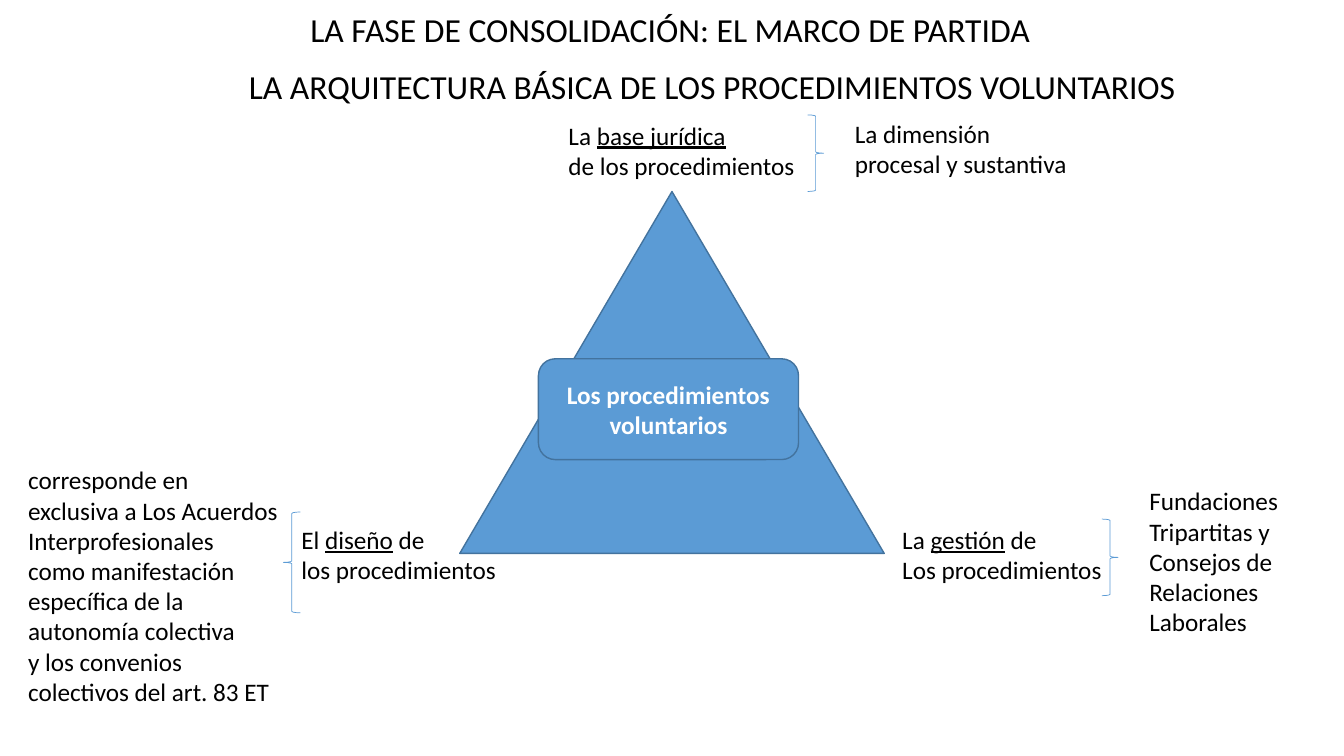
from pptx import Presentation
from pptx.dml.color import RGBColor
from pptx.enum.shapes import MSO_SHAPE as SHAPE
from pptx.enum.text import MSO_ANCHOR as ANCHOR, MSO_AUTO_SIZE as AUTO, PP_ALIGN as ALIGN
from pptx.util import Inches, Pt

COLORS = {"text": "000000", "fill": "5B9BD5", "edge": "43739E", "light": "FFFFFF"}
FONT = "Calibri"


class Deck:
    def __init__(self, width, height):
        self.prs = Presentation()
        self.prs.slide_width, self.prs.slide_height = Inches(width), Inches(height)
        self.s = self.prs.slides.add_slide(self.prs.slide_layouts[6])

    def color(self, name):
        return RGBColor.from_string(COLORS[name])

    def run(self, p, text, size=18, color="text", bold=False, underline=False):
        r = p.add_run()
        r.text = text
        r.font.name, r.font.size = FONT, Pt(size)
        r.font.bold, r.font.underline = bold, underline
        r.font.color.rgb = self.color(color)

    def text(self, box, lines, size=18):
        tf = self.s.shapes.add_textbox(*map(Inches, box)).text_frame
        tf.word_wrap = False
        tf.auto_size = AUTO.SHAPE_TO_FIT_TEXT
        for i, line in enumerate(lines):
            p = tf.add_paragraph() if i else tf.paragraphs[0]
            for j, part in enumerate(line.split("_")):
                if part:
                    self.run(p, part, size, underline=j % 2 == 1)

    def shape(self, kind, box, line="edge", weight=1, fill="fill"):
        sp = self.s.shapes.add_shape(kind, *map(Inches, box))
        sp.shadow.inherit = False
        if fill:
            sp.fill.solid()
            sp.fill.fore_color.rgb = self.color(fill)
        else:
            sp.fill.background()
        sp.line.color.rgb = self.color(line)
        sp.line.width = Pt(weight)
        return sp

    def brace(self, kind, box):
        self.shape(kind, box, line="fill", weight=0.5, fill=None)

    def label(self, sp, text):
        tf = sp.text_frame
        tf.word_wrap = True
        tf.vertical_anchor = ANCHOR.MIDDLE
        p = tf.paragraphs[0]
        p.alignment = ALIGN.CENTER
        self.run(p, text, color="light", bold=True)


def main():
    deck = Deck(13.33, 7.5)

    deck.text((2.98, 0.04, 7.4, 0.5),
              ["LA FASE DE CONSOLIDACIÓN: EL MARCO DE PARTIDA"], 24)
    deck.text((2.37, 0.6, 9.47, 0.5),
              ["LA ARQUITECTURA BÁSICA DE LOS PROCEDIMIENTOS VOLUNTARIOS"], 24)

    deck.shape(SHAPE.ISOSCELES_TRIANGLE, (4.56, 1.9, 4.21, 3.59))
    center = deck.shape(SHAPE.ROUNDED_RECTANGLE, (5.34, 3.56, 2.58, 1))
    deck.label(center, "Los procedimientos voluntarios")

    deck.text((5.54, 1.14, 2.47, 0.71), ["La _base jurídica_", "de los procedimientos"])
    deck.text((2.89, 5.15, 2.15, 0.71), ["El _diseño_ de", "los procedimientos"])
    deck.text((8.85, 5.15, 2.2, 0.71), ["La _gestión_ de", "Los procedimientos"])

    deck.brace(SHAPE.RIGHT_BRACE, (8.01, 1.14, 0.16, 0.76))
    deck.brace(SHAPE.LEFT_BRACE, (2.81, 5.08, 0.17, 1))
    deck.brace(SHAPE.RIGHT_BRACE, (10.93, 5.15, 0.16, 0.76))

    deck.text((8.38, 1.12, 2.32, 0.71), ["La dimensión", "procesal y sustantiva"])
    deck.text((0.18, 4.56, 2.71, 2.52), [
        "corresponde en", "exclusiva a Los Acuerdos", "Interprofesionales",
        "como manifestación", "específica de la", "autonomía colectiva",
        "y los convenios", "colectivos del art. 83 ET"])
    deck.text((11.3, 4.77, 1.49, 1.62), [
        "Fundaciones", "Tripartitas y", "Consejos de", "Relaciones", "Laborales"])

    deck.prs.save("out.pptx")


if __name__ == "__main__":
    main()
